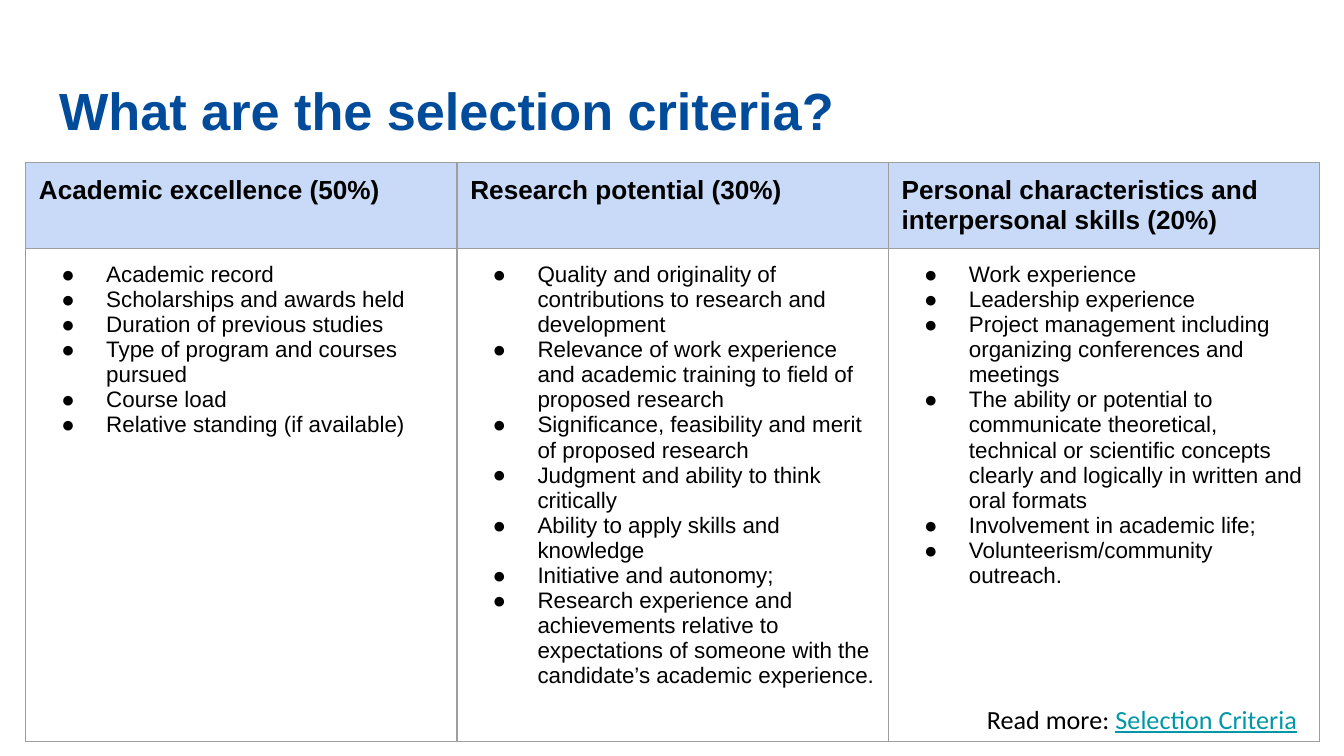
import pptx
import pptx.dml.color
import pptx.enum.text
import pptx.oxml
import pptx.oxml.ns
import pptx.util

Pt = pptx.util.Pt
BLACK, BLUE, TEAL = "000000", "004C9B", "0097A7"
HEADER_FILL, BODY_FILL, BORDER = "C9DAF8", "FFFFFF", "9E9E9E"
INSET = 7.2

CRITERIA = [
    ("Academic excellence (50%)", [
        "Academic record",
        "Scholarships and awards held",
        "Duration of previous studies",
        "Type of program and courses pursued",
        "Course load",
        "Relative standing (if available)",
    ]),
    ("Research potential (30%)", [
        "Quality and originality of contributions to research and development",
        "Relevance of work experience and academic training to field of proposed research",
        "Significance, feasibility and merit of proposed research",
        "Judgment and ability to think critically",
        "Ability to apply skills and knowledge",
        "Initiative and autonomy;",
        "Research experience and achievements relative to expectations of someone "
        "with the candidate’s academic experience.",
    ]),
    ("Personal characteristics and interpersonal skills (20%)", [
        "Work experience",
        "Leadership experience",
        "Project management including organizing conferences and meetings",
        "The ability or potential to communicate theoretical, technical or scientific "
        "concepts clearly and logically in written and oral formats",
        "Involvement in academic life;",
        "Volunteerism/community outreach.",
    ]),
]


def rgb(value):
    return pptx.dml.color.RGBColor.from_string(value)


def add_run(paragraph, text, size, color=BLACK, font="Arial", bold=False, underline=False):
    run = paragraph.add_run()
    run.text = text
    run.font.name = font
    run.font.size = Pt(size)
    run.font.color.rgb = rgb(color)
    run.font.bold = bold
    run.font.underline = underline


def set_insets(holder):
    """Give a cell or text frame the same margin on all sides."""
    holder.margin_left = holder.margin_right = Pt(INSET)
    holder.margin_top = holder.margin_bottom = Pt(INSET)


def append_xml(parent, tag, attributes="", content=""):
    namespace = pptx.oxml.ns.nsdecls("a")
    parent.append(pptx.oxml.parse_xml(f"<a:{tag} {namespace} {attributes}>{content}</a:{tag}>"))


def set_bullet(paragraph):
    properties = paragraph._p.get_or_add_pPr()
    properties.set("marL", str(Pt(36)))
    properties.set("indent", str(Pt(-24)))
    append_xml(properties, "buClr", content=f'<a:srgbClr val="{BLACK}"/>')
    append_xml(properties, "buFont", 'typeface="Arial"')
    append_xml(properties, "buChar", 'char="●"')


def style_cell(cell, fill):
    set_insets(cell)
    line = f'<a:solidFill><a:srgbClr val="{BORDER}"/></a:solidFill>'
    for side in ("lnL", "lnR", "lnT", "lnB"):
        append_xml(cell._tc.get_or_add_tcPr(), side, f'w="{Pt(0.75)}"', line)
    cell.fill.solid()
    cell.fill.fore_color.rgb = rgb(fill)


def add_title(slide, text):
    title = slide.shapes.title
    title.left, title.top, title.width, title.height = Pt(24.5), Pt(35.3), Pt(671), Pt(45.4)
    frame = title.text_frame
    set_insets(frame)
    frame.margin_bottom = Pt(5)
    frame.word_wrap = True
    frame.vertical_anchor = pptx.enum.text.MSO_ANCHOR.BOTTOM
    paragraph = frame.paragraphs[0]
    paragraph.alignment = pptx.enum.text.PP_ALIGN.LEFT
    paragraph.line_spacing = 1.0
    add_run(paragraph, text, 28, BLUE, bold=True)


def add_criteria_table(slide):
    column_width, row_heights = 231.1, (46.1, 264.2)
    table = slide.shapes.add_table(
        len(row_heights), len(CRITERIA), Pt(13.7), Pt(87.1),
        Pt(column_width * len(CRITERIA)), Pt(sum(row_heights))).table
    for row, height in zip(table.rows, row_heights):
        row.height = Pt(height)
    for index, (heading, points) in enumerate(CRITERIA):
        table.columns[index].width = Pt(column_width)
        header, body = table.cell(0, index), table.cell(1, index)
        style_cell(header, HEADER_FILL)
        style_cell(body, BODY_FILL)
        add_run(header.text_frame.paragraphs[0], heading, 14, bold=True)
        for number, point in enumerate(points):
            frame = body.text_frame
            paragraph = frame.add_paragraph() if number else frame.paragraphs[0]
            set_bullet(paragraph)
            add_run(paragraph, point, 12)


def add_read_more(slide):
    frame = slide.shapes.add_textbox(Pt(475.9), Pt(369.4), Pt(226.1), Pt(29.5)).text_frame
    set_insets(frame)
    frame.word_wrap = True
    paragraph = frame.paragraphs[0]
    paragraph.alignment = pptx.enum.text.PP_ALIGN.RIGHT
    add_run(paragraph, "Read more: ", 14, font="Calibri")
    add_run(paragraph, "Selection Criteria", 14, TEAL, "Calibri", underline=True)


def main():
    deck = pptx.Presentation()
    deck.slide_width, deck.slide_height = Pt(720), Pt(405)
    slide = deck.slides.add_slide(deck.slide_layouts[5])
    add_title(slide, "What are the selection criteria?")
    add_criteria_table(slide)
    add_read_more(slide)
    deck.save("out.pptx")


if __name__ == "__main__":
    main()
